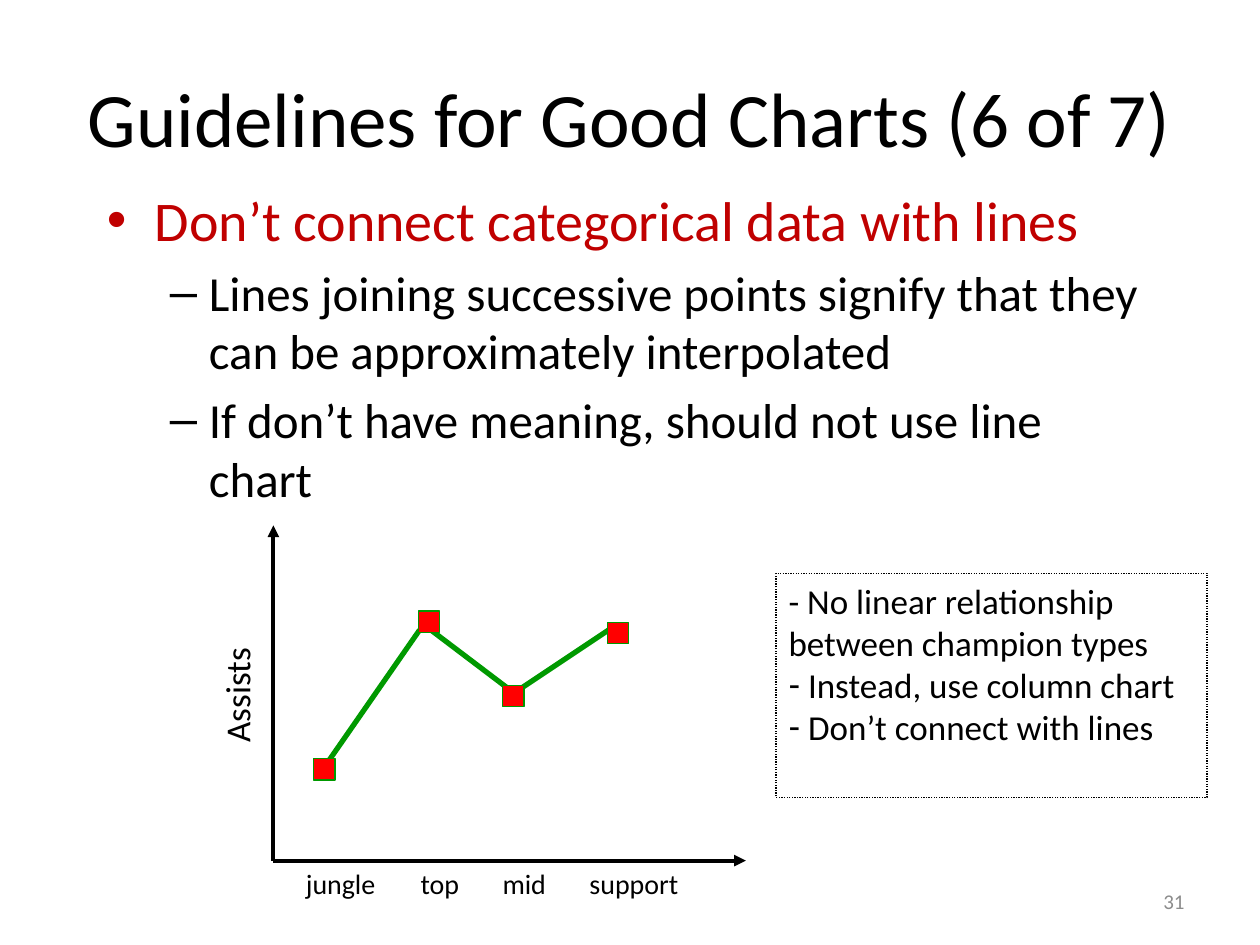
from pptx import Presentation, util as u
from pptx.dml.color import RGBColor
from pptx.enum import dml, shapes, text
from pptx.oxml.ns import qn
from lxml import etree

Inches, Pt = u.Inches, u.Pt
BLACK = RGBColor(0x00, 0x00, 0x00)
CRIMSON = RGBColor(0xC0, 0x00, 0x00)
RED = RGBColor(0xFF, 0x00, 0x00)
GREEN = RGBColor(0x00, 0x99, 0x00)
GREY = RGBColor(0x8C, 0x8C, 0x8C)
LEFT, CENTER, RIGHT = (text.PP_ALIGN.LEFT, text.PP_ALIGN.CENTER,
                       text.PP_ALIGN.RIGHT)


def add_run(p, words, size, color=BLACK, align=LEFT):
    p.alignment = align
    r = p.add_run()
    r.text = words
    for name, value in {"name": "Calibri", "size": Pt(size)}.items():
        setattr(r.font, name, value)
    r.font.color.rgb = color


def set_bullet(p, char, margin=0, indent=0):
    pPr = p._p.get_or_add_pPr()
    pPr.set("marL", str(Inches(margin)))
    pPr.set("indent", str(Inches(indent)))
    etree.SubElement(pPr, qn("a:buFont")).set("typeface", "Arial")
    etree.SubElement(pPr, qn("a:buChar")).set("char", char)


def add_label(s, box, words, size, color=BLACK, align=LEFT, wrap=False,
              anchor=text.MSO_ANCHOR.TOP):
    sp = s.shapes.add_textbox(*map(Inches, box))
    tf = sp.text_frame
    tf.word_wrap, tf.vertical_anchor = wrap, anchor
    add_run(tf.paragraphs[0], words, size, color, align)
    return sp


def add_line(s, start, end, color, width, arrow=False):
    ln = s.shapes.add_connector(shapes.MSO_CONNECTOR.STRAIGHT,
                                *map(Inches, (*start, *end)))
    ln.line.color.rgb = color
    ln.line.width = Pt(width)
    if arrow:
        etree.SubElement(ln.line._ln, qn("a:tailEnd")).set("type", "triangle")
    etree.SubElement(ln._element.spPr, qn("a:effectLst"))


def add_rect(s, box, color, width):
    sp = s.shapes.add_shape(shapes.MSO_SHAPE.RECTANGLE, *map(Inches, box))
    sp.shadow.inherit = False
    sp.line.color.rgb = color
    sp.line.width = Pt(width)
    return sp


def add_guidelines(s, box):
    # Main guideline with its two explanations
    tf = s.shapes.add_textbox(*map(Inches, box)).text_frame
    tf.word_wrap = True
    items = [
        (0, "Don’t connect categorical data with lines"),
        (1, "Lines joining successive points signify that they can be "
            "approximately interpolated"),
        (1, "If don’t have meaning, should not use line chart"),
    ]
    levels = [("•", 0.38, -0.38, 32, CRIMSON), ("–", 0.81, -0.31, 28, BLACK)]
    for i, (level, words) in enumerate(items):
        char, margin, indent, size, color = levels[level]
        p = tf.add_paragraph() if i else tf.paragraphs[0]
        p.level = level
        p.space_before = Pt(size * 0.2)
        set_bullet(p, char, margin, indent)
        add_run(p, words, size, color)


def add_sketch(s, box):
    x, y, w, h = box
    base = y + h

    # Axes
    add_line(s, (x, base), (x, y), BLACK, 2.25, arrow=True)
    add_line(s, (x, base), (x + w, base), BLACK, 2.25, arrow=True)

    # Joining lines
    for x1, y1, x2, y2 in [(0.41, 1.91, 1.16, 0.83), (1.25, 0.83, 1.91, 1.33),
                           (1.91, 1.33, 2.66, 0.83)]:
        add_line(s, (x + x1, y + y1), (x + x2, y + y2), GREEN, 3)

    # Axis labels
    for name, dx, width in [("jungle", 0.16, 0.76), ("top", 1.07, 0.51),
                            ("mid", 1.72, 0.55), ("support", 2.41, 0.92)]:
        add_label(s, (x + dx, base, width, 0.37), name, 16)
    add_label(s, (x - 0.77, y + 1.12, 0.96, 0.44), "Assists", 20).rotation = 270

    # Point markers
    side = 0.17
    for dx, dy in [(0.32, 1.85), (1.15, 0.68), (1.82, 1.27), (2.65, 0.77)]:
        sp = add_rect(s, (x + dx, y + dy, side, side), GREEN, 0.75)
        sp.fill.solid()
        sp.fill.fore_color.rgb = RED


def add_note(s, box):
    # Dotted comment box
    sp = add_rect(s, box, BLACK, 0.75)
    sp.fill.background()
    sp.line.dash_style = dml.MSO_LINE.ROUND_DOT
    tf = sp.text_frame
    tf.word_wrap, tf.vertical_anchor = True, text.MSO_ANCHOR.TOP
    add_run(tf.paragraphs[0],
            "- No linear relationship between champion types", 20)
    for words in (" Instead, use column chart", " Don’t connect with lines"):
        p = tf.add_paragraph()
        set_bullet(p, "-")
        add_run(p, words, 20)


def main():
    prs = Presentation()
    prs.slide_width, prs.slide_height = Inches(10), Inches(7.5)
    s = prs.slides.add_slide(prs.slide_layouts[6])
    middle = text.MSO_ANCHOR.MIDDLE
    add_label(s, (7.17, 6.95, 2.33, 0.4), "31", 12, GREY, RIGHT, True, middle)
    add_label(s, (0.5, 0.3, 9, 1.25), "Guidelines for Good Charts (6 of 7)",
              44, BLACK, CENTER, True, middle)
    add_guidelines(s, (0.75, 1.42, 8.5, 2.67))
    add_sketch(s, (2.17, 4.17, 3.75, 2.66))
    add_note(s, (6.16, 4.55, 3.42, 1.78))
    prs.save("out.pptx")


if __name__ == "__main__":
    main()
